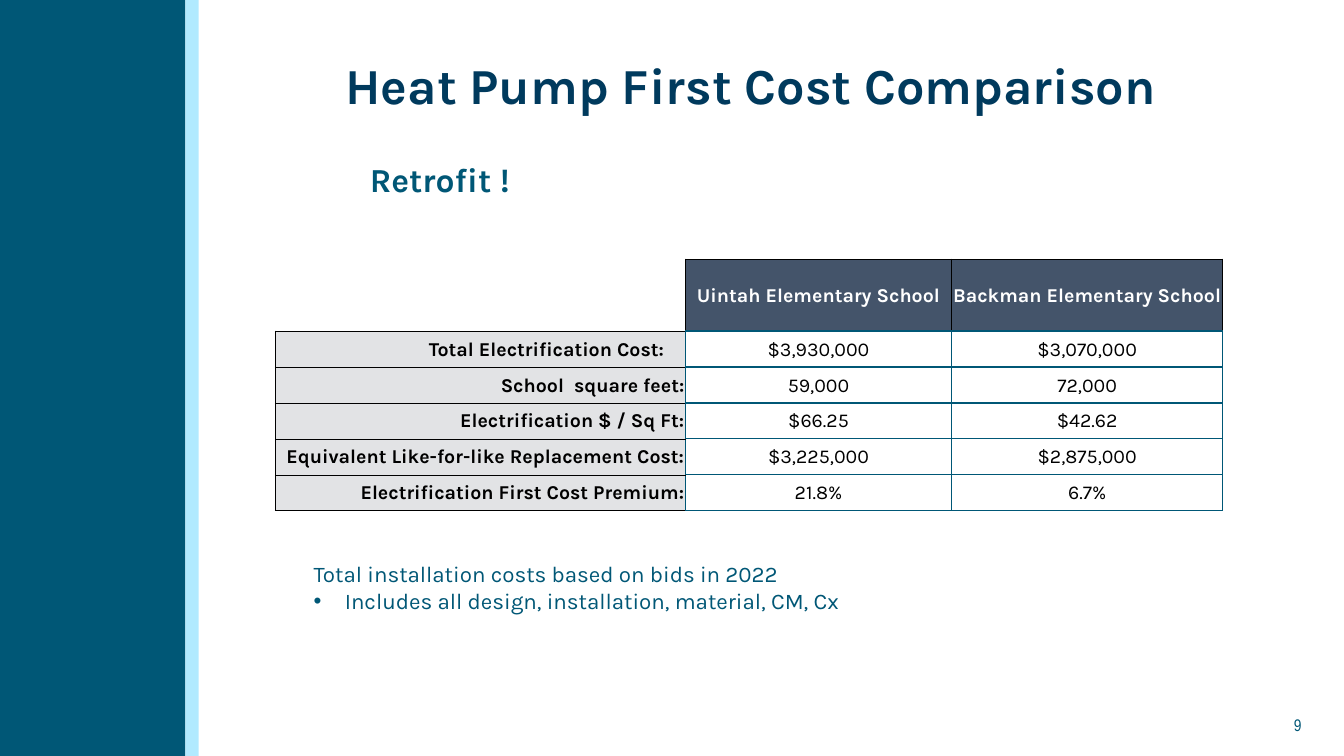
"""Build the heat pump first cost comparison slide."""
from dataclasses import dataclass

import lxml.etree
import pptx
import pptx.dml.color
import pptx.enum.shapes
import pptx.enum.text
import pptx.oxml.ns
import pptx.util

TEAL, NAVY, SKY = "005776", "003A5D", "B1EAFF"
SLATE, GREY, BLACK, WHITE = "44546A", "E2E3E5", "000000", "FFFFFF"
W, H = pptx.util.Inches(13.33), pptx.util.Inches(7.5)
ALIGN = pptx.enum.text.PP_ALIGN
ANCHOR = pptx.enum.text.MSO_ANCHOR


@dataclass(frozen=True)
class Area:
    """A rectangle in percent of the slide's width and height."""
    x: float
    y: float
    w: float
    h: float

    def box(self) -> tuple[int, int, int, int]:
        return across(self.x), down(self.y), across(self.w), down(self.h)


@dataclass(frozen=True)
class Type:
    """The look of a run of text."""
    size: float
    color: str
    bold: bool = False
    font: str = "Karla"


@dataclass(frozen=True)
class CellStyle:
    """Text, fill, alignment and borders (left, right, top, bottom) of a cell."""
    type: Type
    fill: str | None
    align: ALIGN
    borders: tuple


@dataclass(frozen=True)
class CostRow:
    """A cost measure and its value for each school."""
    label: str
    values: tuple[str, str]
    inset: float = 0.01


THIN, RULE = (BLACK, 0.5), (TEAL, 1)
BLANK = CellStyle(Type(14, BLACK), None, ALIGN.LEFT, (None, THIN, None, THIN))
HEAD = CellStyle(Type(14, WHITE, True), SLATE, ALIGN.CENTER, (THIN, THIN, THIN, RULE))
LABEL = CellStyle(Type(14, BLACK, True), GREY, ALIGN.RIGHT, (THIN, RULE, THIN, THIN))
VALUE = CellStyle(Type(14, BLACK), None, ALIGN.CENTER, (RULE,) * 4)

BANDS = ((Area(0, 0, 13.8, 100), TEAL), (Area(13.8, 0, 0.98, 100), SKY))
COLUMNS = (30.53, 19.8, 20.18)
HEAD_ROW, COST_ROW = 9.52, 4.76
SCHOOLS = ("Uintah Elementary School", "Backman Elementary School")
COSTS = (
    CostRow("Total Electrification Cost:", ("$3,930,000", "$3,070,000"), 0.21),
    CostRow("School  square feet:", ("59,000", "72,000")),
    CostRow("Electrification $ / Sq Ft:", ("$66.25", "$42.62")),
    CostRow("Equivalent Like-for-like Replacement Cost:", ("$3,225,000", "$2,875,000")),
    CostRow("Electrification First Cost Premium:", ("21.8%", "6.7%")),
)


def across(share: float) -> int:
    """Convert a percentage of the slide's width to a length."""
    return int(W * share / 100)


def down(share: float) -> int:
    """Convert a percentage of the slide's height to a length."""
    return int(H * share / 100)


def rgb(color: str) -> pptx.dml.color.RGBColor:
    """Turn a hex string into a colour."""
    return pptx.dml.color.RGBColor.from_string(color)


def sub(parent, tag: str, **attrs: str):
    """Append a DrawingML element."""
    return lxml.etree.SubElement(parent, pptx.oxml.ns.qn(tag), attrs)


def write(p, text: str, look: Type, align: ALIGN = ALIGN.LEFT) -> None:
    """Add a run to a paragraph and format both."""
    p.alignment, p.line_spacing, p.space_before = align, 1.0, pptx.util.Pt(0)
    r = p.add_run()
    r.text = text
    r.font.name, r.font.size, r.font.bold = look.font, pptx.util.Pt(look.size), look.bold
    r.font.color.rgb = rgb(look.color)


def place(sp, area: Area):
    """Move a text shape and return its wrapped, top-anchored frame."""
    sp.left, sp.top, sp.width, sp.height = area.box()
    tf = sp.text_frame
    tf.word_wrap, tf.vertical_anchor = True, ANCHOR.TOP
    tf.auto_size = pptx.enum.text.MSO_AUTO_SIZE.NONE
    return tf


def add_band(s, area: Area, color: str) -> None:
    """Draw a plain vertical band."""
    sp = s.shapes.add_shape(pptx.enum.shapes.MSO_SHAPE.RECTANGLE, *area.box())
    sp.shadow.inherit = False
    sp.fill.solid()
    sp.fill.fore_color.rgb = rgb(color)
    sp.line.fill.background()


def add_text(s, area: Area, text: str, look: Type, align: ALIGN = ALIGN.LEFT):
    """Add a one-line text box and return its frame."""
    tf = place(s.shapes.add_textbox(*area.box()), area)
    write(tf.paragraphs[0], text, look, align)
    return tf


def set_bullet(p, mark: str = "") -> None:
    """Give a paragraph a hanging bullet, or none."""
    indent = pptx.util.Inches(0.31) if mark else 0
    pPr = p._p.get_or_add_pPr()
    pPr.set("marL", str(indent))
    pPr.set("indent", str(-indent))
    if mark:
        sub(pPr, "a:buFont", typeface="Arial")
        sub(pPr, "a:buChar", char=mark)
    else:
        sub(pPr, "a:buNone")


def fill_cell(cell, text: str, style: CellStyle, inset: float = 0.01) -> None:
    """Write and format one table cell."""
    cell.margin_left = cell.margin_top = pptx.util.Inches(0.01)
    cell.margin_right, cell.margin_bottom = pptx.util.Inches(inset), 0
    cell.vertical_anchor = ANCHOR.MIDDLE
    tcPr = cell._tc.get_or_add_tcPr()
    for side, border in zip("LRTB", style.borders):
        if border:
            color, width = border
            ln = sub(tcPr, f"a:ln{side}", w=str(pptx.util.Pt(width)))
            sub(sub(ln, "a:solidFill"), "a:srgbClr", val=color)
    if style.fill:
        cell.fill.solid()
        cell.fill.fore_color.rgb = rgb(style.fill)
    else:
        cell.fill.background()
    if text:
        write(cell.text_frame.paragraphs[0], text, style.type, style.align)


def add_costs(s) -> None:
    """Add the table of costs by school."""
    area = Area(20.48, 34.27, sum(COLUMNS), HEAD_ROW + COST_ROW * len(COSTS))
    table = s.shapes.add_table(len(COSTS) + 1, len(COLUMNS), *area.box()).table
    table.first_row = table.horz_banding = False
    for column, share in zip(table.columns, COLUMNS):
        column.width = across(share)
    for i, row in enumerate(table.rows):
        row.height = down(COST_ROW if i else HEAD_ROW)
    fill_cell(table.cell(0, 0), "", BLANK)
    for j, school in enumerate(SCHOOLS, 1):
        fill_cell(table.cell(0, j), school, HEAD)
    for i, cost in enumerate(COSTS, 1):
        fill_cell(table.cell(i, 0), cost.label, LABEL, cost.inset)
        for j, value in enumerate(cost.values, 1):
            fill_cell(table.cell(i, j), value, VALUE)


def main() -> None:
    """Build and save the slide."""
    prs = pptx.Presentation()
    prs.slide_width, prs.slide_height = W, H
    s = prs.slides.add_slide(prs.slide_layouts[1])
    for area, color in BANDS:
        add_band(s, area, color)
    tf = place(s.shapes.title, Area(18.95, 6.53, 73.82, 9.87))
    write(tf.paragraphs[0], "Heat Pump First Cost Comparison", Type(36, NAVY, True), ALIGN.CENTER)
    add_text(s, Area(26.78, 20.4, 60.92, 6.67), "Retrofit !", Type(24, TEAL, True))
    add_costs(s)
    tf = place(s.placeholders[1], Area(22.58, 73.47, 68.42, 8.53))
    notes = (("Total installation costs based on bids in 2022", ""),
             ("Includes all design, installation, material, CM, Cx", "•"))
    for i, (note, mark) in enumerate(notes):
        p = tf.add_paragraph() if i else tf.paragraphs[0]
        set_bullet(p, mark)
        write(p, note, Type(16, TEAL))
    number = Type(12, TEAL, font="Arial Narrow")
    tf = add_text(s, Area(87.4, 94.53, 9.45, 2.67), "9", number, ALIGN.RIGHT)
    tf.margin_left = tf.margin_right = tf.margin_top = tf.margin_bottom = 0
    prs.save("out.pptx")


if __name__ == "__main__":
    main()
